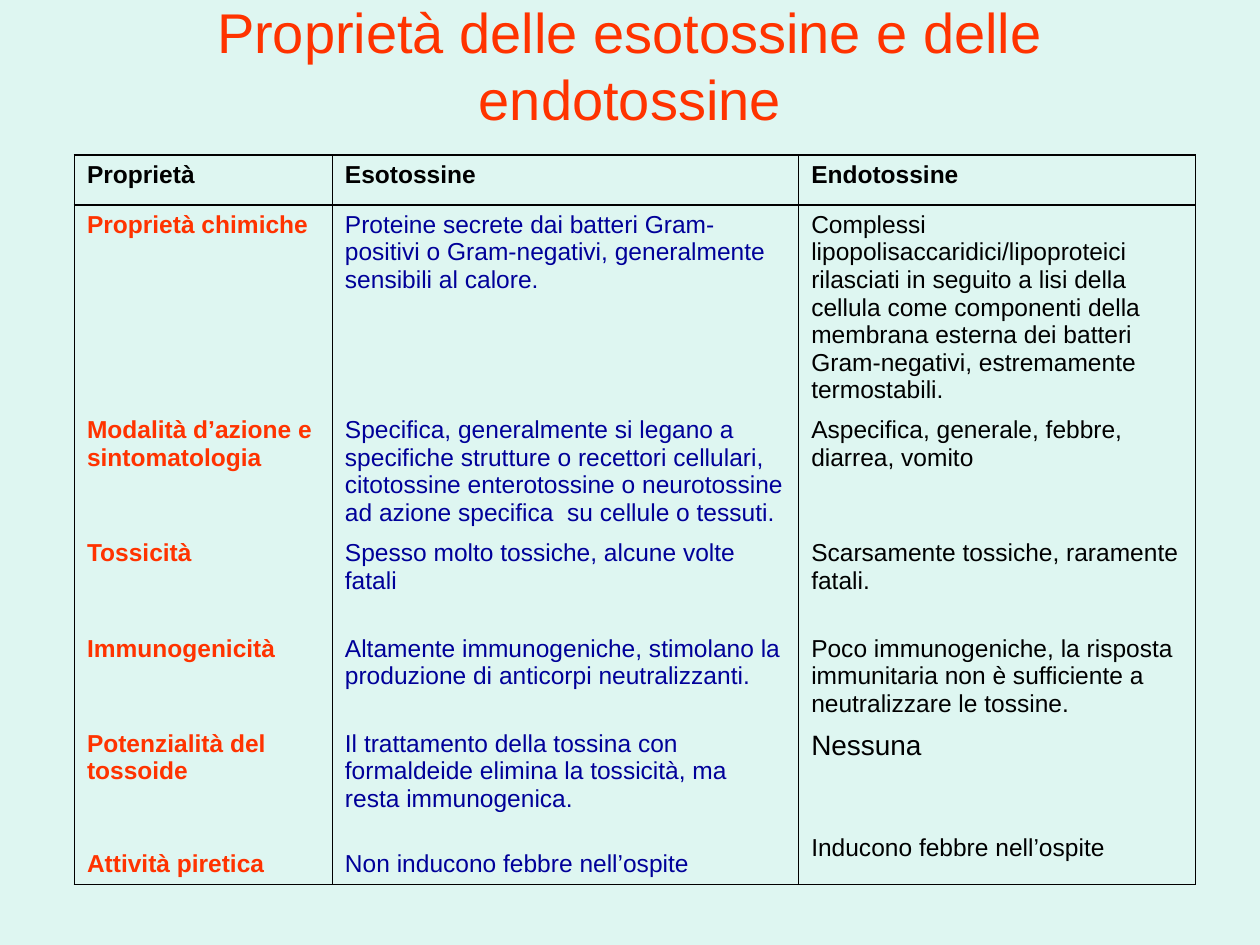
from lxml import etree
from pptx import Presentation
from pptx.dml.color import RGBColor
from pptx.enum.text import MSO_ANCHOR, MSO_AUTO_SIZE, PP_ALIGN
from pptx.oxml.ns import qn
from pptx.util import Cm, Pt

CENTER = PP_ALIGN.CENTER
MIDDLE = MSO_ANCHOR.MIDDLE
NO_FIT = MSO_AUTO_SIZE.NONE
FONT = "Arial"
COLORS = {"back": "DEF6F1", "red": "FF3300", "blue": "000099", "black": "000000"}


def style(par, size, color, bold=False):
    for run in par.runs:
        run.font.name = FONT
        run.font.size = Pt(size)
        run.font.bold = bold
        run.font.color.rgb = RGBColor.from_string(COLORS[color])


def border(cell, shown):
    """Draw the shown sides in black and switch the others off."""
    props = cell._tc.get_or_add_tcPr()
    for i, side in enumerate(("L", "R", "T", "B")):
        line = etree.Element(qn(f"a:ln{side}"), w=str(Pt(1)))
        if side in shown:
            fill = etree.SubElement(line, qn("a:solidFill"))
            etree.SubElement(fill, qn("a:srgbClr"), val=COLORS["black"])
        else:
            etree.SubElement(line, qn("a:noFill"))
        props.insert(i, line)


# Slide and background
deck = Presentation()
deck.slide_width, deck.slide_height = Cm(25.4), Cm(19.05)
slide = deck.slides.add_slide(deck.slide_layouts[5])
slide.background.fill.solid()
slide.background.fill.fore_color.rgb = RGBColor.from_string(COLORS["back"])

# Title
title = slide.shapes.title
title.left, title.top = Cm(1.9), Cm(-0.28)
title.width, title.height = Cm(21.6), Cm(3.18)
frame = title.text_frame
frame.text = "Proprietà delle esotossine e delle endotossine"
frame.auto_size = NO_FIT
frame.vertical_anchor = MIDDLE
frame.paragraphs[0].alignment = CENTER
style(frame.paragraphs[0], 32, "red")

# Table content: a line break in a cell starts a new paragraph
rows = [
    ("Proprietà", "Esotossine", "Endotossine"),
    ("Proprietà chimiche",
     "Proteine secrete dai batteri Gram-positivi o Gram-negativi, "
     "generalmente sensibili al calore.",
     "Complessi lipopolisaccaridici/lipoproteici rilasciati in seguito a lisi "
     "della cellula come componenti della  membrana esterna dei batteri "
     "Gram-negativi, estremamente termostabili."),
    ("Modalità d’azione e sintomatologia",
     "Specifica, generalmente si legano a specifiche strutture o recettori "
     "cellulari, citotossine enterotossine o neurotossine ad azione specifica  "
     "su cellule o tessuti.",
     "Aspecifica, generale, febbre, diarrea, vomito"),
    ("Tossicità",
     "Spesso molto tossiche, alcune volte fatali",
     "Scarsamente tossiche, raramente fatali."),
    ("Immunogenicità",
     "Altamente immunogeniche, stimolano la produzione di anticorpi neutralizzanti.",
     "Poco immunogeniche, la risposta immunitaria non è sufficiente a "
     "neutralizzare le tossine."),
    ("Potenzialità del tossoide\nAttività piretica",
     "Il trattamento della tossina con formaldeide elimina la tossicità, "
     "ma resta immunogenica.\nNon inducono febbre nell’ospite",
     "Nessuna\nInducono febbre nell’ospite"),
]
widths = (5.2, 9.4, 8)
heights = (1.01, 4.13, 2.48, 1.92, 1.92, 3.23)
tints = ("red", "blue", "black")
gaps = (37.4, 21.4, 42)  # space above the last entry of each column
last = len(rows) - 1

# Table
table = slide.shapes.add_table(
    len(rows), len(widths), Cm(1.5), Cm(3.12), Cm(sum(widths)), Cm(sum(heights))
).table
table.first_row = table.horz_banding = False
for col, width in zip(table.columns, widths):
    col.width = Cm(width)
for row, height in zip(table.rows, heights):
    row.height = Cm(height)

for r, row in enumerate(rows):
    for c, text in enumerate(row):
        cell = table.cell(r, c)
        cell.fill.background()
        border(cell, "LR" + "T" * (r < 2) + "B" * (r in (0, last)))
        cell.text_frame.text = text
        for i, par in enumerate(cell.text_frame.paragraphs):
            size = 16 if text.startswith("Nessuna") and i == 0 else 14
            style(par, size, tints[c] if r else "black", r == 0 or c == 0)
            if i:
                par.space_before = Pt(gaps[c])

deck.save("out.pptx")
